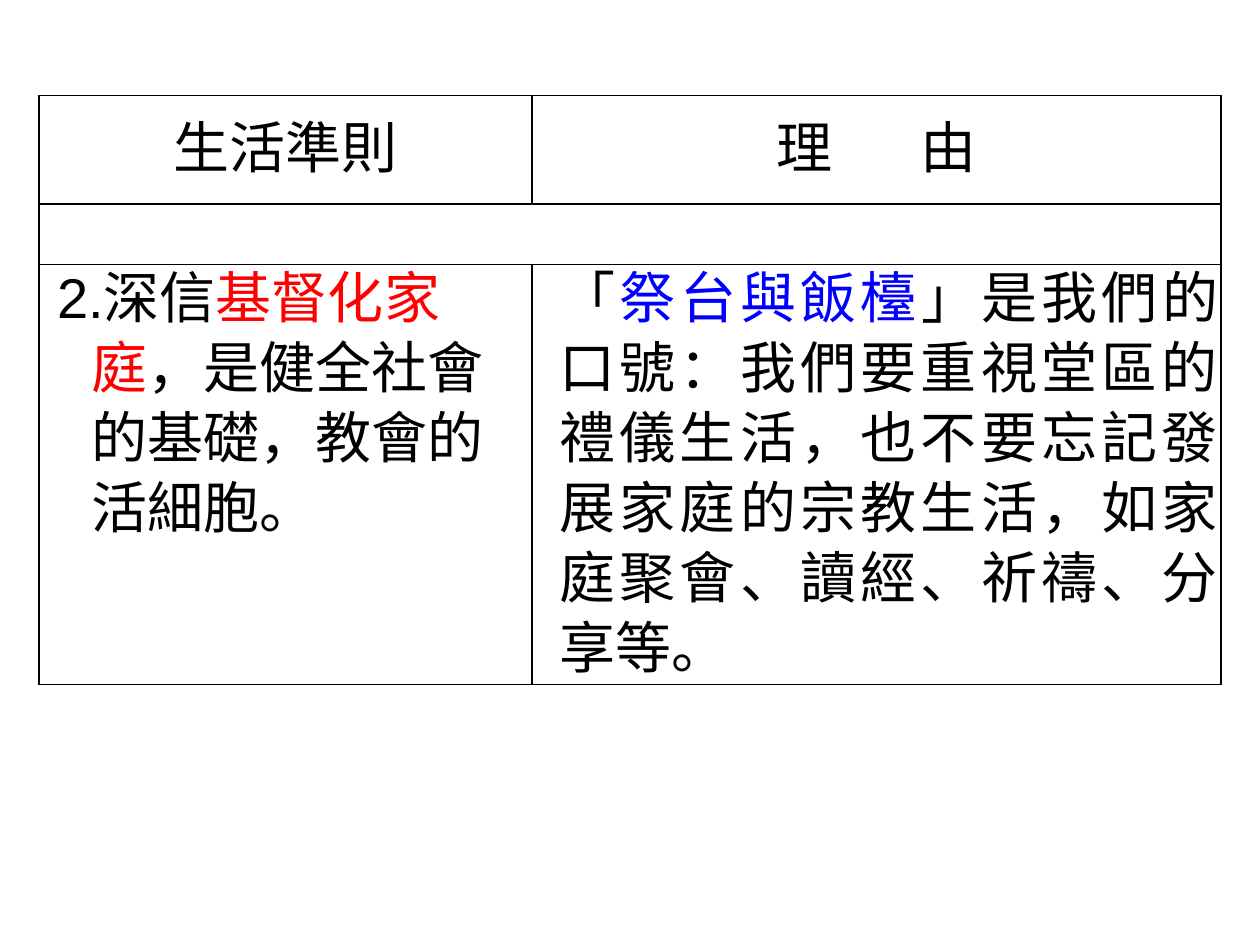
from dataclasses import dataclass

from lxml import etree
from pptx import Presentation
from pptx.dml.color import RGBColor
from pptx.enum.text import MSO_ANCHOR, PP_ALIGN
from pptx.oxml.ns import qn
from pptx.table import _Cell
from pptx.util import Cm, Pt

BLACK = RGBColor(0, 0, 0)
RED = RGBColor(255, 0, 0)
BLUE = RGBColor(0, 0, 255)
MIDDLE, TOP = MSO_ANCHOR.MIDDLE, MSO_ANCHOR.TOP
CENTER, LEFT, JUSTIFY = PP_ALIGN.CENTER, PP_ALIGN.LEFT, PP_ALIGN.JUSTIFY
LATIN, HAN = "Arial", "Noto Sans CJK SC"
WIDTHS = (9.93, 13.89)
HEIGHTS = (2.18, 1.22, 8.46)
SIDES = ("a:lnL", "a:lnR", "a:lnT", "a:lnB")


@dataclass(frozen=True)
class Span:
    text: str
    color: RGBColor = BLACK
    gap: float = 0


@dataclass(frozen=True)
class Para:
    spans: tuple[Span, ...]
    align: PP_ALIGN = JUSTIFY
    left: float = 0
    first: float = 0
    pad: float = 0
    font: str = LATIN


@dataclass(frozen=True)
class Entry:
    row: int
    col: int
    anchor: MSO_ANCHOR
    paras: tuple[Para, ...]


ENTRIES = (
    Entry(0, 0, MIDDLE, (Para((Span("生活準則"),), CENTER, 0.41, -0.41, 1.2),)),
    Entry(0, 1, MIDDLE, (
        Para((Span("理"), Span(" ", gap=43), Span("由")), CENTER, pad=1.2),
    )),
    Entry(2, 0, TOP, (
        Para((Span("2.深信"), Span("基督化家", RED)), left=0.31),
        Para((Span("庭", RED), Span("，是健全社會")), left=1.01),
        Para((Span("的基礎，教會的"),), LEFT, 1.01),
        Para((Span("活細胞。"),), LEFT, 1.01),
    )),
    Entry(2, 1, TOP, (
        Para((
            Span("「"),
            Span("祭台與飯檯", BLUE),
            Span("」是我們的口號：我們要重視堂區的禮儀生活，也不要忘記"
                 "發展家庭的宗教生活，如家庭聚會、讀經、祈禱、分享等。"),
        ), left=0.51, font=HAN),
    )),
)


def style(cell: _Cell) -> None:
    """Give a cell thin black borders, narrow margins and no fill."""
    cell.margin_left = cell.margin_right = Cm(0.05)
    cell.margin_top = cell.margin_bottom = 0
    props = cell._tc.get_or_add_tcPr()
    for side in SIDES:
        line = etree.SubElement(props, qn(side), w=str(Pt(1)))
        fill = etree.SubElement(line, qn("a:solidFill"))
        etree.SubElement(fill, qn("a:srgbClr"), val=str(BLACK))
    cell.fill.background()


def write(cell: _Cell, entry: Entry) -> None:
    """Write the paragraphs of an entry into its cell."""
    cell.vertical_anchor = entry.anchor
    frame = cell.text_frame
    for index, para in enumerate(entry.paras):
        line = frame.add_paragraph() if index else frame.paragraphs[0]
        line.alignment = para.align
        line.line_spacing = Pt(40)
        line.space_before = line.space_after = Pt(para.pad)
        line.font.size = Pt(32)
        line.font.name = para.font
        props = line._p.get_or_add_pPr()
        props.set("marL", str(Cm(para.left)))
        props.set("indent", str(Cm(para.first)))
        for span in para.spans:
            run = line.add_run()
            run.text = span.text
            run.font.color.rgb = span.color
            if span.gap:
                run._r.get_or_add_rPr().set("spc", str(int(span.gap * 100)))


def main() -> None:
    """Build the slide with its table of rules and reasons."""
    deck = Presentation()
    deck.slide_width, deck.slide_height = Cm(25.4), Cm(19.05)
    slide = deck.slides.add_slide(deck.slide_layouts[6])
    table = slide.shapes.add_table(
        len(HEIGHTS), len(WIDTHS), Cm(0.79), Cm(1.93),
        Cm(sum(WIDTHS)), Cm(sum(HEIGHTS)),
    ).table
    table.first_row = table.horz_banding = False
    for col, width in zip(table.columns, WIDTHS):
        col.width = Cm(width)
    for row, height in zip(table.rows, HEIGHTS):
        row.height = Cm(height)
    for cell in table.iter_cells():
        style(cell)
    table.cell(1, 0).merge(table.cell(1, 1))
    for entry in ENTRIES:
        write(table.cell(entry.row, entry.col), entry)
    deck.save("out.pptx")


if __name__ == "__main__":
    main()
